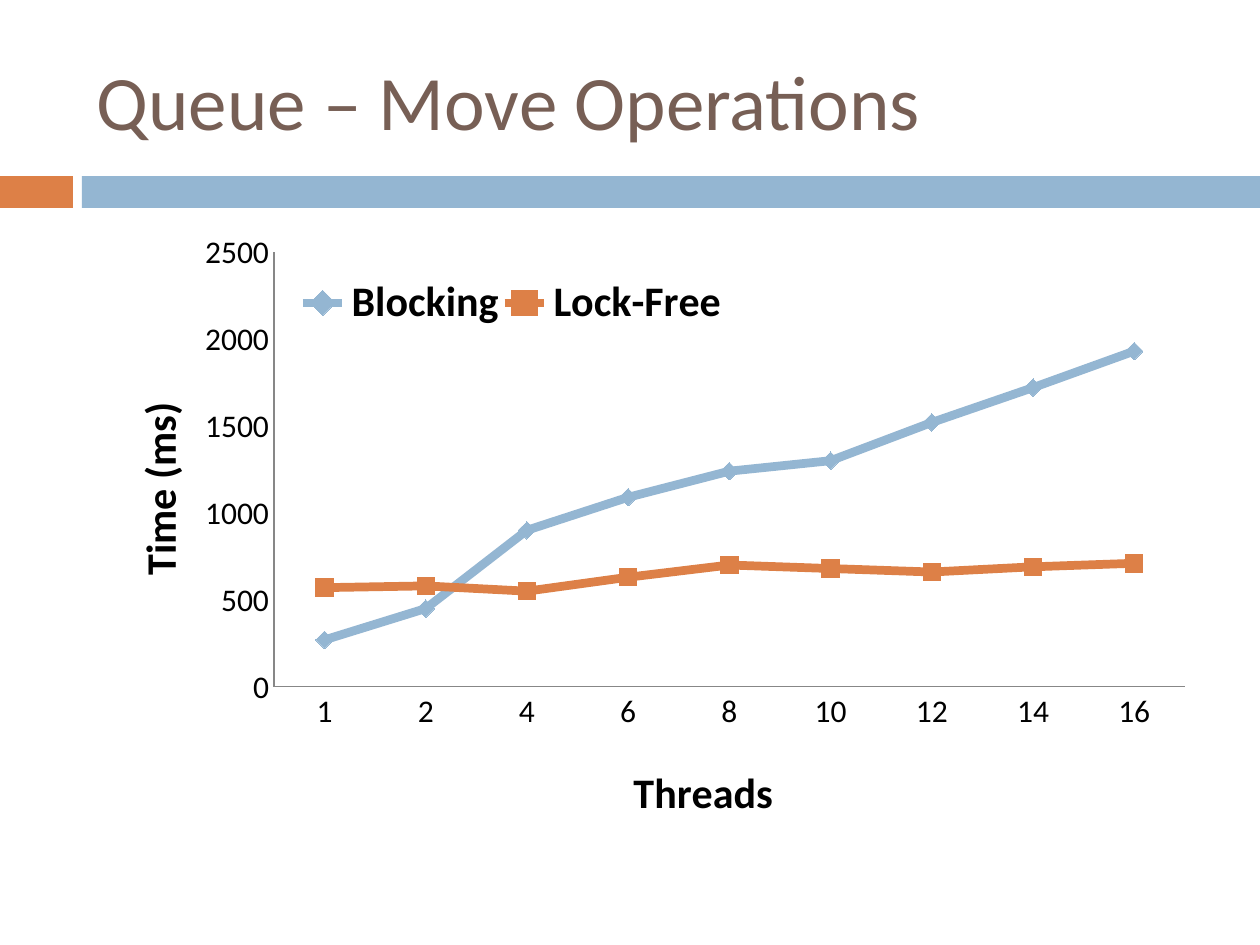
"""Build the slide comparing blocking and lock-free queue move operations."""
from lxml.etree import SubElement
from pptx import Presentation
from pptx.chart.data import CategoryChartData
from pptx.dml.color import RGBColor
from pptx.enum.chart import XL_CHART_TYPE, XL_LEGEND_POSITION, XL_MARKER_STYLE, XL_TICK_MARK
from pptx.enum.shapes import MSO_SHAPE
from pptx.enum.text import MSO_ANCHOR, PP_ALIGN
from pptx.oxml.ns import qn
from pptx.util import Pt

PX = 914400 // 126
FONT = "Calibri"
COLORS = {"blue": "94B6D2", "orange": "DD8047", "brown": "775F55",
          "black": "000000", "axis": "878787"}
CHART_BOX = (84, 220, 1124, 620)


def color(name):
    return RGBColor.from_string(COLORS[name])


def place(element, position, left, top, width=None, height=None, inner=False):
    """Give a chart part a manual layout from slide pixels."""
    for old_layout in element.findall(qn("c:layout")):
        element.remove(old_layout)
    layout = SubElement(element, qn("c:layout"))
    element.insert(position, layout)
    manual = SubElement(layout, qn("c:manualLayout"))
    chart_left, chart_top, chart_width, chart_height = CHART_BOX
    settings = [("layoutTarget", "inner")] if inner else []
    settings += [("xMode", "edge"), ("yMode", "edge"),
                 ("x", (left - chart_left) / chart_width),
                 ("y", (top - chart_top) / chart_height)]
    if width:
        settings += [("w", width / chart_width), ("h", height / chart_height)]
    for tag, value in settings:
        SubElement(manual, qn(f"c:{tag}")).set("val", str(value))


presentation = Presentation()
presentation.slide_width = 1260 * PX
presentation.slide_height = 945 * PX
slide = presentation.slides.add_slide(presentation.slide_layouts[5])

for left, width, fill in [(0, 73, "orange"), (82, 1178, "blue")]:
    bar = slide.shapes.add_shape(MSO_SHAPE.RECTANGLE, left * PX, 176 * PX, width * PX, 32 * PX)
    bar.shadow.inherit = False
    bar.fill.solid()
    bar.fill.fore_color.rgb = color(fill)
    bar.line.fill.background()

title = slide.shapes.title
title.left, title.top, title.width, title.height = (n * PX for n in (84, 32, 1124, 136))
title.text_frame.text = "Queue – Move Operations"
title.text_frame.vertical_anchor = MSO_ANCHOR.MIDDLE
paragraph = title.text_frame.paragraphs[0]
paragraph.alignment = PP_ALIGN.LEFT
paragraph.font.size = Pt(44)
paragraph.font.name = FONT
paragraph.font.color.rgb = color("brown")

data = CategoryChartData()
data.categories = ["1", "2", "4", "6", "8", "10", "12", "14", "16"]
data.add_series("Blocking", [270, 450, 900, 1090, 1240, 1300, 1520, 1720, 1930])
data.add_series("Lock-Free", [570, 580, 550, 630, 700, 680, 660, 690, 710])
chart = slide.shapes.add_chart(
    XL_CHART_TYPE.LINE_MARKERS, *(n * PX for n in CHART_BOX), data).chart
chart.has_title = False
chart.font.name = FONT
chart.font.size = Pt(10)
chart.font.color.rgb = color("black")
place(chart.plots[0]._element.getparent(), 0, 274, 252, 911, 435, inner=True)

styles = [("blue", XL_MARKER_STYLE.DIAMOND), ("orange", XL_MARKER_STYLE.SQUARE)]
for series, (series_color, marker_style) in zip(chart.plots[0].series, styles):
    series.smooth = False
    series.format.line.width = Pt(5)
    series.format.line.color.rgb = color(series_color)
    series.marker.style = marker_style
    series.marker.size = 10
    series.marker.format.fill.solid()
    series.marker.format.fill.fore_color.rgb = color(series_color)
    series.marker.format.line.color.rgb = color(series_color)

axes = [(chart.category_axis, "Threads", 0, 626, 757),
        (chart.value_axis, "Time (ms)", -5400000, 124, 395)]
for axis, caption, rotation, left, top in axes:
    axis.has_major_gridlines = False
    axis.major_tick_mark = axis.minor_tick_mark = XL_TICK_MARK.NONE
    axis.format.line.color.rgb = color("axis")
    axis.tick_labels.font.size = Pt(18)
    text_frame = axis.axis_title.text_frame
    text_frame.text = caption
    text_frame._txBody.bodyPr.set("rot", str(rotation))
    caption_font = text_frame.paragraphs[0].font
    caption_font.size = Pt(24)
    caption_font.bold = True
    caption_font.name = FONT
    caption_font.color.rgb = color("black")
    place(axis.axis_title._element, 1, left, top)

chart.value_axis.minimum_scale = 0
chart.value_axis.maximum_scale = 2500
chart.value_axis.major_unit = 500

chart.has_legend = True
legend = chart.legend
legend.position = XL_LEGEND_POSITION.RIGHT
legend.include_in_layout = True
legend.font.size = Pt(24)
legend.font.bold = True
legend.font.name = FONT
legend.font.color.rgb = color("black")
place(legend._element, 1, 297, 273, 430, 60)

presentation.save("out.pptx")
